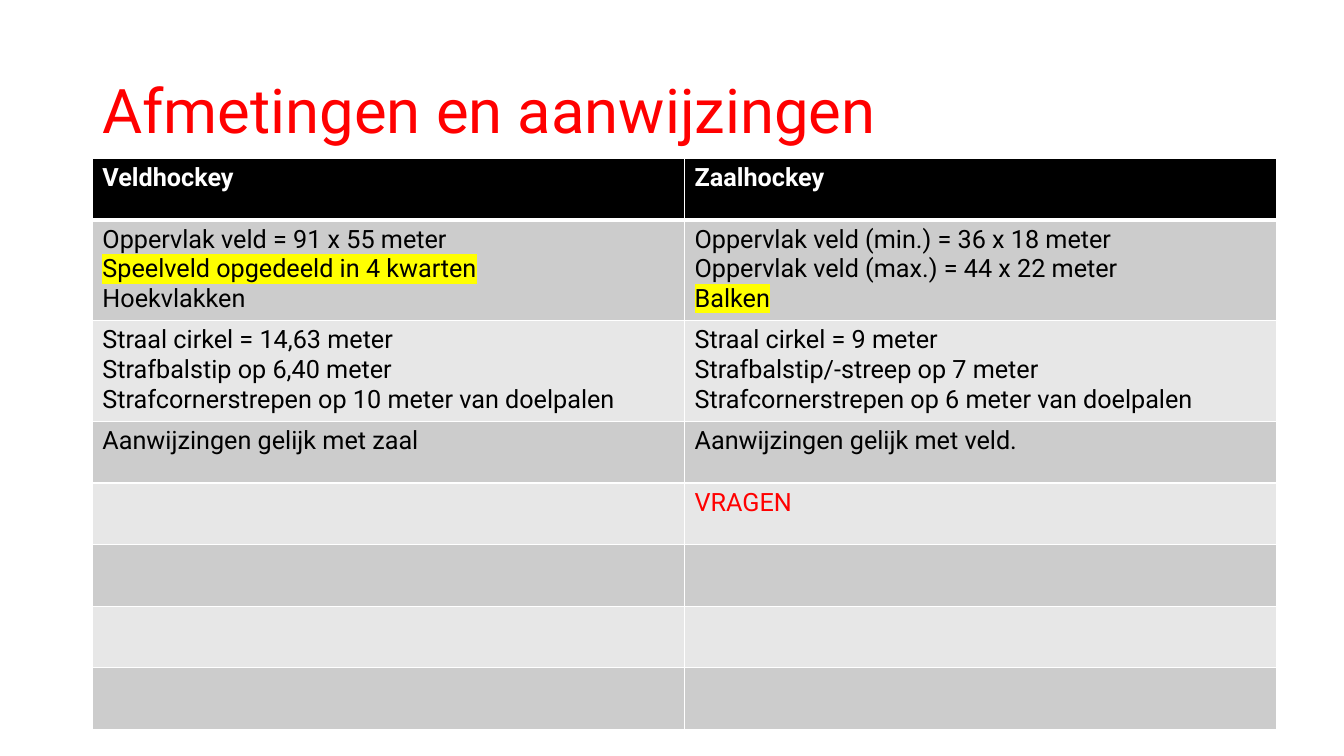
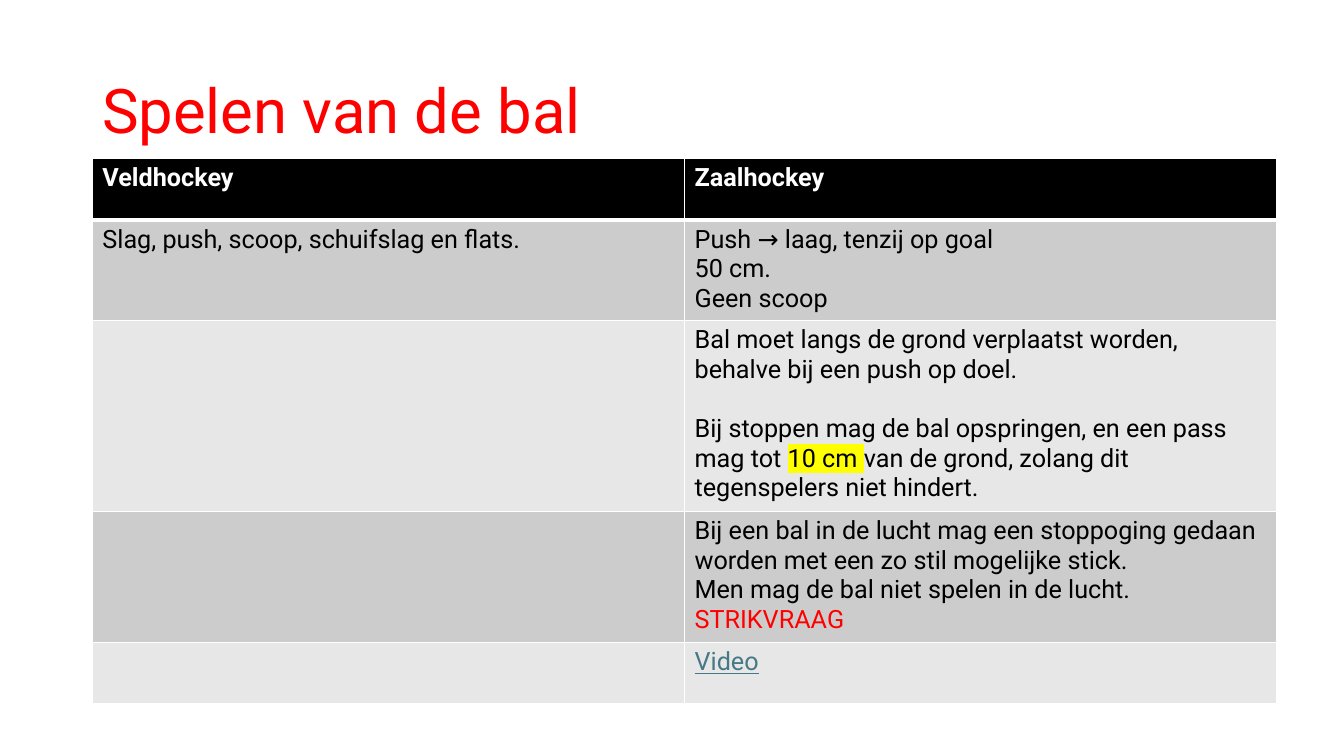
from lxml import etree
from pptx import Presentation
from pptx.dml.color import RGBColor
from pptx.enum import text as tx
from pptx.oxml import ns
from pptx.util import Pt

RED = RGBColor(0xFF, 0x00, 0x00)
BLACK = RGBColor(0x00, 0x00, 0x00)
WHITE = RGBColor(0xFF, 0xFF, 0xFF)
DARK = RGBColor(0xCC, 0xCC, 0xCC)
LIGHT = RGBColor(0xE7, 0xE7, 0xE7)
YELLOW = RGBColor(0xFF, 0xFF, 0x00)
TEAL = RGBColor(0x46, 0x78, 0x86)

TITLE = {"name": "Roboto", "size": Pt(44), "color": RED}
BODY = {"name": "Roboto", "size": Pt(18), "bold": False, "color": BLACK}
HEAD = {**BODY, "bold": True, "color": WHITE}
MARK = {"mark": YELLOW}
ALERT = {"color": RED}
LINK = {"color": TEAL, "underline": True}
GAP = {"gap": Pt(21)}

TITLE_BOX = (66, 29, 828, 104)
TABLE_BOX = (66, 113, 846)
HEADS = ("Veldhockey", "Zaalhockey")

SIZES = [
    (71, ["Oppervlak veld = 91 x 55 meter",
          [("Speelveld opgedeeld in 4 kwarten", MARK)],
          "Hoekvlakken"],
         ["Oppervlak veld (min.) = 36 x 18 meter",
          "Oppervlak veld (max.) = 44 x 22 meter",
          [("Balken", MARK)]]),
    (71, ["Straal cirkel = 14,63 meter",
          "Strafbalstip op 6,40 meter",
          "Strafcornerstrepen op 10 meter van doelpalen"],
         ["Straal cirkel = 9 meter",
          "Strafbalstip/-streep op 7 meter",
          "Strafcornerstrepen op 6 meter van doelpalen"]),
    (44, ["Aanwijzingen gelijk met zaal"], ["Aanwijzingen gelijk met veld."]),
    (44, [], [[("VRAGEN", ALERT)]]),
] + [(44, [], [])] * 3

PLAY = [
    (71, ["Slag, push, scoop, schuifslag en flats."],
         ["Push → laag, tenzij op goal", "50 cm.", "Geen scoop"]),
    (134, [],
          ["Bal moet langs de grond verplaatst worden, behalve bij een push op doel.",
           [("Bij stoppen mag de bal opspringen, en een pass mag tot ", GAP),
            ("10 cm ", MARK),
            ("van de grond, zolang dit tegenspelers niet hindert.", {})]]),
    (92, [],
         ["Bij een bal in de lucht mag een stoppoging gedaan worden "
          "met een zo stil mogelijke stick.",
          "Men mag de bal niet spelen in de lucht.",
          [("STRIKVRAAG", ALERT)]]),
    (44, [], [[("Video", LINK)]]),
]


def add_run(para, words, form):
    """Add one run of text in the given format."""
    run = para.add_run()
    run.text = words
    for key, val in form.items():
        if key == "color":
            run.font.color.rgb = val
        elif key == "gap":
            para.space_before = val
        elif key != "mark":
            setattr(run.font, key, val)
    if "mark" in form:
        mark = etree.Element(ns.qn("a:highlight"))
        etree.SubElement(mark, ns.qn("a:srgbClr"), val=str(form["mark"]))
        run.font.fill._xPr.find(ns.qn("a:solidFill")).addnext(mark)


def fill_text(frame, lines, base):
    """Write each line as a paragraph; a line is a string or a list of runs."""
    for num, line in enumerate(lines):
        para = frame.add_paragraph() if num else frame.paragraphs[0]
        runs = [(line, {})] if isinstance(line, str) else line
        for words, form in runs:
            add_run(para, words, {**base, **form})


def set_edges(cell, widths):
    """Draw white cell borders; widths run left, right, top, bottom."""
    props = cell._tc.get_or_add_tcPr()
    for num, (side, width) in enumerate(zip("LRTB", widths)):
        edge = etree.Element(ns.qn("a:ln" + side), w=str(Pt(width)))
        fill = etree.SubElement(edge, ns.qn("a:solidFill"))
        etree.SubElement(fill, ns.qn("a:srgbClr"), val=str(WHITE))
        props.insert(num, edge)


def add_title(slide, box, words):
    """Place the red title in its box."""
    frame = slide.shapes.add_textbox(*map(Pt, box)).text_frame
    frame.word_wrap = True
    frame.vertical_anchor = tx.MSO_ANCHOR.MIDDLE
    fill_text(frame, [words], TITLE)
    frame.paragraphs[0].line_spacing = 0.9


def add_grid(slide, box, rows):
    """Place the two-column table with a black head and grey bands."""
    left, top, width = box
    rows = [(44, *([head] for head in HEADS))] + rows
    high = sum(row[0] for row in rows)
    grid = slide.shapes.add_table(
        len(rows), len(HEADS), *map(Pt, (left, top, width, high))).table
    grid.horz_banding = False
    for num, (tall, *cells) in enumerate(rows):
        grid.rows[num].height = Pt(tall)
        for col, lines in enumerate(cells):
            cell = grid.cell(num, col)
            cell.fill.solid()
            cell.fill.fore_color.rgb = (LIGHT, DARK)[num % 2] if num else BLACK
            set_edges(cell, (1, 1, 3 if num == 1 else 1, 1 if num else 3))
            fill_text(cell.text_frame, lines, BODY if num else HEAD)


def add_page(deck, title, rows):
    """Add one slide that compares field and indoor hockey."""
    slide = deck.slides.add_slide(deck.slide_layouts[6])
    add_title(slide, TITLE_BOX, title)
    add_grid(slide, TABLE_BOX, rows)


def main():
    """Build and save the deck."""
    deck = Presentation()
    deck.slide_width, deck.slide_height = Pt(960), Pt(540)
    add_page(deck, "Afmetingen en aanwijzingen", SIZES)
    add_page(deck, "Spelen van de bal", PLAY)
    deck.save("out.pptx")


if __name__ == "__main__":
    main()
